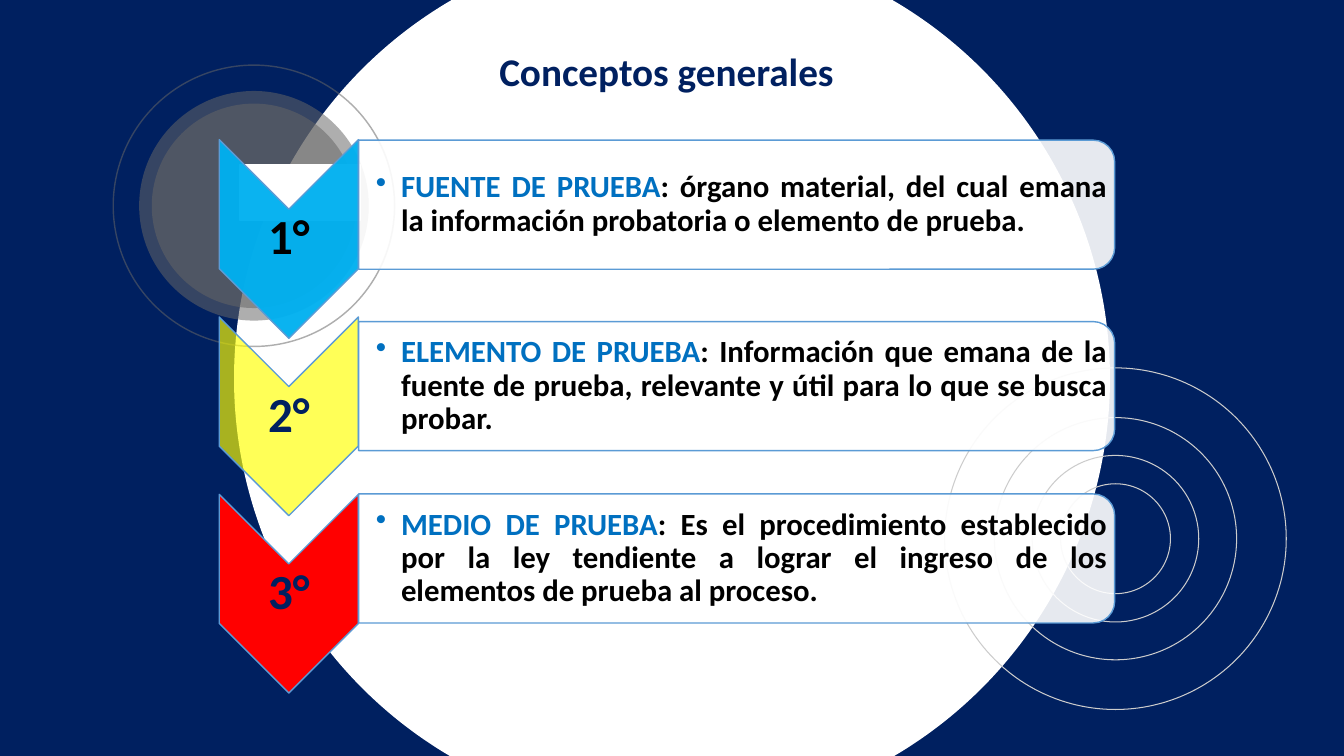
import pptx
import pptx.util
import pptx.dml.color
import pptx.enum.shapes
import pptx.enum.text
import pptx.oxml
import pptx.oxml.ns

Pt = pptx.util.Pt
KIND = pptx.enum.shapes.MSO_SHAPE
ALIGN = pptx.enum.text.PP_ALIGN
ANCHOR = pptx.enum.text.MSO_ANCHOR
FONT = "Calibri"
COLORS = {
    "navy": "002060", "white": "FFFFFF", "black": "000000",
    "ring": "CCCCCC", "gray": "666666", "edge": "5B9BD5",
    "term": "0070C0", "cyan": "00B0F0", "yellow": "FFFF00", "red": "FF0000",
}
STEPS = [
    ("1°", "black", "cyan", 96, 146.2, "FUENTE DE PRUEBA",
     ": órgano material, del cual emana la información probatoria o elemento de prueba."),
    ("2°", "navy", "yellow", 66, 275.8, "ELEMENTO DE PRUEBA",
     ": Información que emana de la fuente de prueba, relevante y útil para lo que se busca probar."),
    ("3°", "navy", "red", 100, 398.9, "MEDIO DE PRUEBA",
     ": Es el procedimiento establecido por la ley tendiente a lograr el ingreso de los elementos de prueba al proceso."),
]


def tint(name):
    """Return the named colour."""
    return pptx.dml.color.RGBColor.from_string(COLORS[name])


def draw(slide, kind, mid, size, fill=None, alpha=100, line=None, width=1, turn=0):
    """Add a preset shape centred on a point."""
    (x, y), (w, h) = mid, size
    shape = slide.shapes.add_shape(kind, Pt(x - w / 2), Pt(y - h / 2), Pt(w), Pt(h))
    shape.shadow.inherit = False
    shape.rotation = turn
    if fill:
        shape.fill.solid()
        shape.fill.fore_color.rgb = tint(fill)
        if alpha < 100:
            color = shape.fill._xPr.find(".//" + pptx.oxml.ns.qn("a:srgbClr"))
            node = pptx.oxml.parse_xml(
                f'<a:alpha {pptx.oxml.ns.nsdecls("a")} val="{alpha * 1000}"/>')
            color.append(node)
    else:
        shape.fill.background()
    if line:
        shape.line.color.rgb = tint(line)
        shape.line.width = Pt(width)
    else:
        shape.line.fill.background()
    return shape


def style(par, size, color, align):
    """Format a bold paragraph with tight lines."""
    par.alignment = align
    par.line_spacing = 0.9
    par.font.name = FONT
    par.font.size = Pt(size)
    par.font.bold = True
    par.font.color.rgb = tint(color)


def frame(shape, anchor, left, pad):
    """Set the insets and anchor of a text frame and return it."""
    body = shape.text_frame
    body.word_wrap = True
    body.vertical_anchor = anchor
    body.margin_left = Pt(left)
    body.margin_top = body.margin_right = body.margin_bottom = Pt(pad)
    return body


def label(slide, text, mid, color):
    """Add the ordinal of a step."""
    box = slide.shapes.add_textbox(Pt(mid[0] - 49.7), Pt(mid[1] - 21.2), Pt(99.4), Pt(42.4))
    par = frame(box, ANCHOR.MIDDLE, 1.6, 1.6).paragraphs[0]
    par.text = text
    style(par, 35, color, ALIGN.CENTER)


def define(slide, term, text, y):
    """Add a bulleted definition that opens with its term."""
    box = slide.shapes.add_textbox(Pt(256.3), Pt(y - 41.5), Pt(535.7), Pt(83))
    par = frame(box, ANCHOR.MIDDLE, 12.2, 1.4).paragraphs[0]
    props = par._p.get_or_add_pPr()
    props.set("marL", str(Pt(18)))
    props.set("indent", str(Pt(-18)))
    props.append(pptx.oxml.parse_xml(
        f'<a:buChar {pptx.oxml.ns.nsdecls("a")} char="•"/>'))
    style(par, 22, "black", ALIGN.JUSTIFY)
    for part, color in ((term, "term"), (text, "black")):
        run = par.add_run()
        run.text = part
        run.font.color.rgb = tint(color)


def decor(slide):
    """Draw the large disc, the rings and the gray discs."""
    draw(slide, KIND.OVAL, (480, 270.4), (625.7, 625.7), "white")
    for size in (244, 119, 173, 78.5):
        draw(slide, KIND.OVAL, (796.8, 384.8), (size, size), line="ring", width=0.75)
    for size in (164, 146):
        draw(slide, KIND.OVAL, (181.4, 147), (size, size), "gray", 53)
    donut = draw(slide, KIND.DONUT, (181.4, 147), (202, 202), "gray", 53)
    donut.adjustments[0] = 0.005
    draw(slide, KIND.RECTANGLE, (214.2, 137.5), (85.7, 40.3), "white", line="white")


def head(slide):
    """Place the title in front of the disc."""
    title = slide.shapes.title
    title.left, title.top, title.width, title.height = Pt(164), Pt(-15), Pt(624), Pt(90)
    par = frame(title, ANCHOR.BOTTOM, 7.2, 7.2).paragraphs[0]
    par.text = "Conceptos generales"
    style(par, 28, "navy", ALIGN.CENTER)
    slide.shapes._spTree.append(title._element)


def main():
    """Build the slide and save it."""
    deck = pptx.Presentation()
    deck.slide_width, deck.slide_height = Pt(960), Pt(540)
    slide = deck.slides.add_slide(deck.slide_layouts[5])
    slide.background.fill.solid()
    slide.background.fill.fore_color.rgb = tint("navy")
    decor(slide)
    for row, (mark, ink, fill, alpha, y, term, text) in enumerate(STEPS):
        mid = (206.3, 170.7 + 126.7 * row)
        draw(slide, KIND.CHEVRON, mid, (141.9, 99.4), fill, alpha, "edge", turn=90)
        label(slide, mark, mid, ink)
        draw(slide, KIND.ROUND_2_SAME_RECTANGLE, (526.2, y), (92.2, 540),
             "white", 90, "edge", turn=90)
        define(slide, term, text, y)
    head(slide)
    deck.save("out.pptx")


if __name__ == "__main__":
    main()
